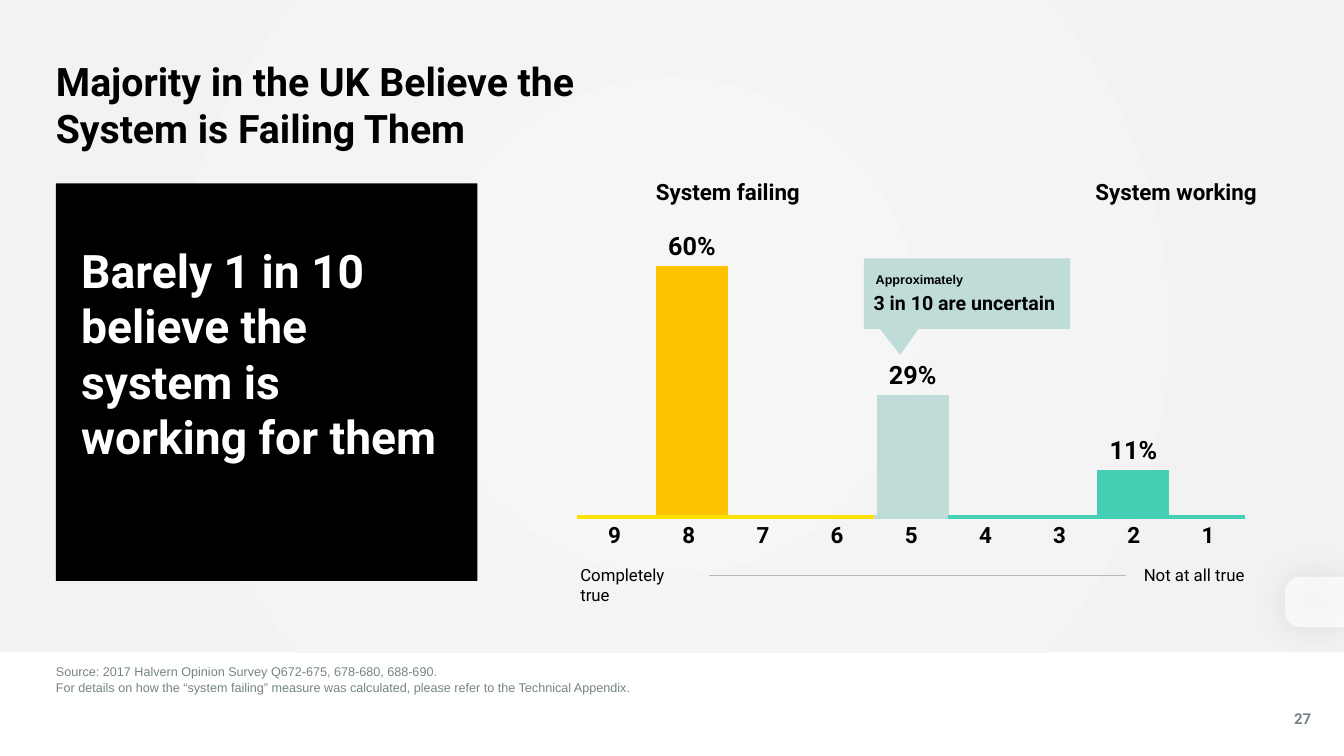
from lxml import etree
from pptx import Presentation
from pptx import util as u
from pptx.chart.data import CategoryChartData
from pptx.dml.color import RGBColor
from pptx.enum import chart as charts, shapes, text
from pptx.oxml import parse_xml
from pptx.oxml.ns import nsdecls, qn

BLACK = RGBColor(0x00, 0x00, 0x00)
WHITE = RGBColor(0xFF, 0xFF, 0xFF)
FOOTNOTE_GREY = RGBColor(0x76, 0x84, 0x89)
SCALE_GREY = RGBColor(0xB9, 0xB9, 0xB9)
BACKDROP_EDGE = RGBColor(0xF2, 0xF2, 0xF2)
BACKDROP_CENTRE = RGBColor(0xF6, 0xF6, 0xF7)
AMBER = RGBColor(0xFF, 0xC2, 0x01)
YELLOW = RGBColor(0xFF, 0xE1, 0x00)
PALE_TEAL = RGBColor(0xC0, 0xDC, 0xD9)
TEAL = RGBColor(0x45, 0xCF, 0xB4)

PLAIN_TABLE = "{2D5ABB26-0587-4C30-8999-92F81FD0307C}"
LEFT, CENTER, RIGHT = (text.PP_ALIGN.LEFT, text.PP_ALIGN.CENTER,
                       text.PP_ALIGN.RIGHT)
TOP, MIDDLE = text.MSO_ANCHOR.TOP, text.MSO_ANCHOR.MIDDLE


def write(frame, words, size=16, color=BLACK, bold=True, font="Roboto",
          align=LEFT, anchor=TOP):
    """Fill a text frame, one paragraph per line of words."""
    frame.word_wrap = True
    frame.vertical_anchor = anchor
    for number, line in enumerate(words.split("\n")):
        paragraph = frame.add_paragraph() if number else frame.paragraphs[0]
        paragraph.alignment = align
        run = paragraph.add_run()
        run.text = line
        run.font.name, run.font.size = font, u.Pt(size)
        run.font.bold, run.font.color.rgb = bold, color


def set_margins(frame, left=0, top=0, right=0, bottom=0):
    frame.margin_left, frame.margin_top = u.Pt(left), u.Pt(top)
    frame.margin_right, frame.margin_bottom = u.Pt(right), u.Pt(bottom)


class Page:
    """Current slide and its kinds of element; lengths in points."""

    def __init__(self, slide):
        self.shapes = slide.shapes

    def place(self, *box):
        return [u.Pt(length) for length in box]

    def block(self, box, color, kind=shapes.MSO_SHAPE.RECTANGLE):
        block = self.shapes.add_shape(kind, *self.place(*box))
        block.shadow.inherit = False
        block.fill.solid()
        block.fill.fore_color.rgb = color
        block.line.fill.background()
        return block

    def label(self, box, words, **style):
        frame = self.shapes.add_textbox(*self.place(*box)).text_frame
        set_margins(frame)
        write(frame, words, **style)

    def line(self, start, end, color, width):
        line = self.shapes.add_connector(shapes.MSO_CONNECTOR.STRAIGHT,
                                         *self.place(*start, *end))
        line.line.color.rgb, line.line.width = color, u.Pt(width)
        etree.SubElement(line._element.spPr, qn("a:effectLst"))

    def columns(self, box, values, colors, top):
        data = CategoryChartData(number_format='0"%"')
        data.categories = [str(n + 1) for n in range(len(values))]
        data.add_series("Series 1", values)
        chart = self.shapes.add_chart(charts.XL_CHART_TYPE.COLUMN_CLUSTERED,
                                      *self.place(*box), data).chart
        chart.has_legend = chart.has_title = False
        chart.font.name, chart.font.size = "Roboto", u.Pt(10)
        chart.font.color.rgb = BLACK
        axis = chart.value_axis
        axis.minimum_scale, axis.maximum_scale = 0, top
        axis.has_major_gridlines = False
        axis.visible = chart.category_axis.visible = False
        plot = chart.plots[0]
        plot.gap_width, plot.overlap = 206, -59
        plot.vary_by_categories = False
        for number, color in enumerate(colors):
            fill = plot.series[0].points[number].format.fill
            fill.solid()
            fill.fore_color.rgb = color
        plot.has_data_labels = True
        labels = plot.data_labels
        labels.show_value = True
        labels.number_format, labels.number_format_is_linked = '0"%"', False
        labels.position = charts.XL_LABEL_POSITION.OUTSIDE_END
        labels.font.name, labels.font.size = "Roboto", u.Pt(18)
        labels.font.bold, labels.font.color.rgb = True, BLACK
        # Let the columns fill the whole frame
        area = chart._chartSpace.find(".//" + qn("c:plotArea"))
        for old in area.findall(qn("c:layout")):
            area.remove(old)
        area.insert(0, parse_xml(
            f'<c:layout {nsdecls("c")}><c:manualLayout>'
            '<c:layoutTarget val="inner"/><c:xMode val="edge"/>'
            '<c:yMode val="edge"/><c:x val="0"/><c:y val="0"/>'
            '<c:w val="1"/><c:h val="0.995"/></c:manualLayout></c:layout>'))

    def scale(self, box, marks):
        """One-row table of (number, colour of the top border)."""
        table = self.shapes.add_table(1, len(marks),
                                      *self.place(*box)).table
        table.first_row = table.horz_banding = False
        table._tbl.tblPr.find(qn("a:tableStyleId")).text = PLAIN_TABLE
        for column, (number, color) in enumerate(marks):
            table.columns[column].width = u.Pt(box[2] / len(marks))
            cell = table.cell(0, column)
            cell.fill.background()
            write(cell.text_frame, str(number), align=CENTER)
            cell._tc.get_or_add_tcPr().insert(0, parse_xml(
                f'<a:lnT {nsdecls("a")} w="{u.Pt(3)}"><a:solidFill>'
                f'<a:srgbClr val="{color}"/></a:solidFill></a:lnT>'))

    def backdrop(self, box):
        fill = self.block(box, BACKDROP_EDGE).fill
        fill.gradient()
        for stop, color in zip(fill.gradient_stops,
                               (BACKDROP_CENTRE, BACKDROP_EDGE)):
            stop.color.rgb = color
        gradient = fill._xPr.find(qn("a:gradFill"))
        gradient.remove(gradient.find(qn("a:lin")))
        gradient.append(parse_xml(
            f'<a:path {nsdecls("a")} path="circle"><a:fillToRect l="50000" '
            't="50000" r="50000" b="50000"/></a:path>'))

    def side_tab(self, box):
        tab = self.block(box, WHITE, shapes.MSO_SHAPE.ROUND_2_SAME_RECTANGLE)
        tab.rotation = 270
        tab.adjustments[0], tab.adjustments[1] = 0.3, 0
        properties = tab._element.spPr
        color = properties.find(".//" + qn("a:srgbClr"))
        etree.SubElement(color, qn("a:alpha"), val="72000")
        properties.find(qn("a:effectLst")).append(parse_xml(
            f'<a:outerShdw {nsdecls("a")} blurRad="{u.Pt(25)}" dist="0" '
            'dir="6780000"><a:srgbClr val="000000"><a:alpha val="12000"/>'
            '</a:srgbClr></a:outerShdw>'))


def main():
    deck = Presentation()
    deck.slide_width, deck.slide_height = u.Pt(960), u.Pt(540)
    page = Page(deck.slides.add_slide(deck.slide_layouts[6]))

    # Backdrop and title
    page.backdrop((0, 0, 960, 466))
    page.label((40, 41, 418, 68),
               "Majority in the UK Believe the System is Failing Them",
               size=28)

    # Key message
    message = page.block((40, 131, 301, 284), BLACK).text_frame
    set_margins(message, 18, 42, 18, 18)
    write(message, "Barely 1 in 10 believe the system is working for them",
          size=33, color=WHITE)

    # Columns and their scale from 9 to 1
    page.columns((415.5, 160, 473, 209.5), (60, 29, 11),
                 (AMBER, PALE_TEAL, TEAL), top=70)
    page.scale((412.5, 369.5, 477, 29.5),
               [(n, YELLOW if n > 5 else PALE_TEAL if n == 5 else TEAL)
                for n in range(9, 0, -1)])
    for left, heading in ((468.5, "System failing"),
                          (782.5, "System working")):
        page.label((left, 121, 170, 31), heading, anchor=MIDDLE)

    # Ends of the scale
    for left, words, align in ((414.5, "Completely true", LEFT),
                               (805, "Not at all true", RIGHT)):
        page.label((left, 403.5, 84, 18), words, size=12, bold=False,
                   align=align)
    page.line((506.5, 411), (804.5, 411), SCALE_GREY, 0.5)

    # Callout
    page.block((617, 184.5, 147.5, 50.5), PALE_TEAL)
    pointer = page.block((628.5, 235, 27.5, 18.5), PALE_TEAL,
                         shapes.MSO_SHAPE.ISOSCELES_TRIANGLE)
    pointer.rotation = 180
    pointer.adjustments[0] = 0.47
    page.label((625.5, 194, 99, 16), "Approximately", size=9, font="Arial")
    page.label((624, 207.5, 161, 17), "3 in 10 are uncertain", size=14)

    # Footer and side tab
    page.label((40, 474.5, 663, 37),
               "Source: 2017 Halvern Opinion Survey Q672-675, 678-680, "
               "688-690.\nFor details on how the “system failing” measure "
               "was calculated, please refer to the Technical Appendix.",
               size=9, color=FOOTNOTE_GREY, bold=False, font="Arial")
    page.label((918, 507, 25, 20), "27", size=10.7, color=FOOTNOTE_GREY,
               align=CENTER)
    page.side_tab((921, 409, 36, 42))

    deck.save("out.pptx")


if __name__ == "__main__":
    main()
